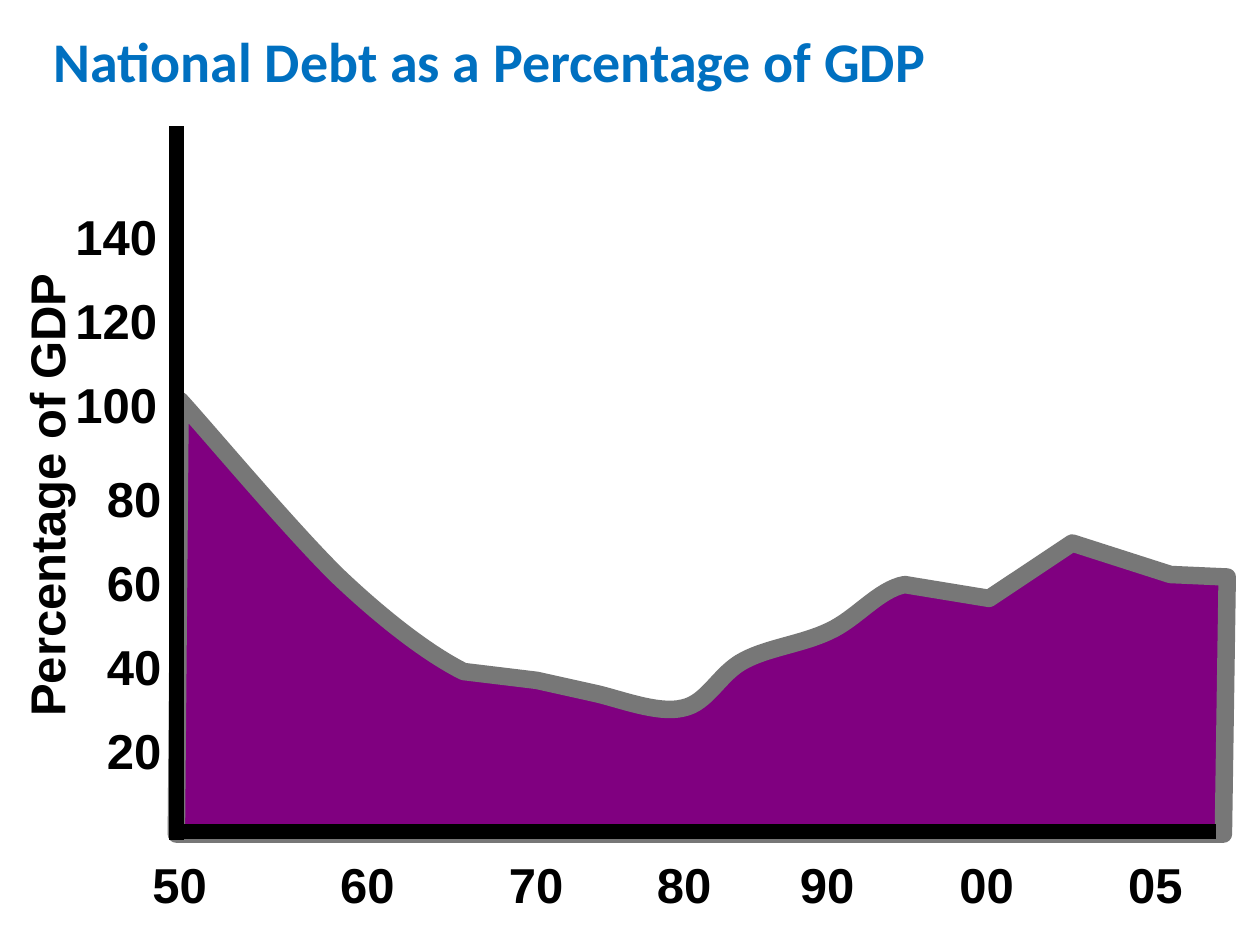
from dataclasses import dataclass

from lxml import etree
from pptx import Presentation
from pptx.dml.color import RGBColor
from pptx.enum.shapes import MSO_CONNECTOR, MSO_SHAPE
from pptx.enum.text import MSO_AUTO_SIZE, PP_ALIGN
from pptx.oxml.ns import qn
from pptx.util import Inches, Pt

STRAIGHT = MSO_CONNECTOR.STRAIGHT
RECTANGLE = MSO_SHAPE.RECTANGLE
LEFT, CENTER = PP_ALIGN.LEFT, PP_ALIGN.CENTER
GROW = MSO_AUTO_SIZE.SHAPE_TO_FIT_TEXT


@dataclass(frozen=True)
class Theme:
    ink: RGBColor = RGBColor(0x00, 0x00, 0x00)
    paper: RGBColor = RGBColor(0xFF, 0xFF, 0xFF)
    title: RGBColor = RGBColor(0x00, 0x70, 0xC0)
    debt: RGBColor = RGBColor(0x80, 0x00, 0x80)
    outline: RGBColor = RGBColor(0x77, 0x77, 0x77)
    title_size: int = 32
    label_size: int = 28
    axis_width: int = 9
    outline_width: int = 10
    title_font: str = "Calibri"
    label_font: str = "Arial"


class SlideBuilder:
    def __init__(self, slide, theme):
        self.shapes = slide.shapes
        self.theme = theme

    def set_text(self, shape, text, align, color, font_format):
        frame = shape.text_frame
        frame.word_wrap = True
        frame.auto_size = GROW
        paragraph = frame.paragraphs[0]
        paragraph.alignment = align
        run = paragraph.add_run()
        run.text = text
        run.font.color.rgb = color
        for key, value in font_format.items():
            setattr(run.font, key, value)

    def label(self, text, box, align=CENTER, rotation=0):
        label = self.shapes.add_textbox(*map(Inches, box))
        label.rotation = rotation
        theme = self.theme
        self.set_text(label, text, align, theme.ink, {
            "name": theme.label_font, "size": Pt(theme.label_size), "bold": True})

    def title(self, text, box):
        theme = self.theme
        banner = self.shapes.add_shape(RECTANGLE, *map(Inches, box))
        banner.shadow.inherit = False
        banner.fill.solid()
        banner.fill.fore_color.rgb = theme.paper
        banner.line.fill.background()
        self.set_text(banner, text, LEFT, theme.title, {
            "name": theme.title_font, "size": Pt(theme.title_size), "bold": True})

    def axis(self, start, end):
        axis = self.shapes.add_connector(STRAIGHT, *map(Inches, start + end))
        axis.line.color.rgb = self.theme.ink
        axis.line.width = Pt(self.theme.axis_width)
        etree.SubElement(axis._element.spPr, qn("a:effectLst"))

    def area(self, start, segments):
        ends = [segment[-1] for segment in segments]
        builder = self.shapes.build_freeform(*map(Inches, start), scale=1.0)
        builder.add_line_segments([tuple(map(Inches, end)) for end in ends], close=True)
        area = builder.convert_to_shape()
        area.shadow.inherit = False
        area.fill.solid()
        area.fill.fore_color.rgb = self.theme.debt
        area.line.color.rgb = self.theme.outline
        area.line.width = Pt(self.theme.outline_width)
        outline = area._element.spPr.find(qn("a:ln"))
        etree.SubElement(outline, qn("a:round"))
        left = min(x for x, _ in [start] + ends)
        top = min(y for _, y in [start] + ends)
        edges = list(area._element.iter(qn("a:lnTo")))
        for edge, segment in zip(edges, segments):
            if len(segment) == 3:
                curve = etree.Element(qn("a:cubicBezTo"))
                for x, y in segment:
                    etree.SubElement(curve, qn("a:pt"), x=str(Inches(x - left)),
                                     y=str(Inches(y - top)))
                edge.getparent().replace(edge, curve)


LABEL_HEIGHT = 0.52
YEAR_TOP = 6.73
TICK_STEP = 2 / 3
YEARS = [("50", 1, 0.85), ("60", 2.58, 0.67), ("70", 3.92, 0.67), ("80", 5, 0.86),
         ("90", 6.08, 0.97), ("00", 7.33, 1), ("05", 8.75, 0.84)]
TICK_GROUPS = [(0.75, 5.67, 1, ("20", "40", "60", "80")),
               (0.5, 2.92, 1.25, ("100", "120", "140"))]
DEBT_START = (1.43, 3.18)
DEBT_SEGMENTS = [
    [(1.64, 3.41), (2.32, 4.22), (2.69, 4.58)],
    [(3.07, 4.94), (3.42, 5.2), (3.68, 5.33)],
    [(4.26, 5.4)],
    [(4.71, 5.5)],
    [(4.9, 5.54), (5.22, 5.67), (5.42, 5.62)],
    [(5.62, 5.58), (5.71, 5.34), (5.91, 5.24)],
    [(6.1, 5.14), (6.37, 5.11), (6.58, 5.01)],
    [(6.8, 4.91), (6.97, 4.68), (7.18, 4.64)],
    [(7.85, 4.75)],
    [(8.51, 4.31)],
    [(9.29, 4.56)],
    [(9.74, 4.58)],
    [(9.71, 6.62)],
    [(1.4, 6.62)],
]


def main():
    deck = Presentation()
    deck.slide_width, deck.slide_height = Inches(10), Inches(7.5)
    slide = deck.slides.add_slide(deck.slide_layouts[6])
    builder = SlideBuilder(slide, Theme())

    for left, lowest_top, width, ticks in TICK_GROUPS:
        for index, tick in enumerate(ticks):
            top = lowest_top - index * TICK_STEP
            builder.label(tick, (left, top, width, LABEL_HEIGHT), LEFT)
    builder.title("National Debt as a Percentage of GDP", (0.33, 0.18, 9.61, 0.59))
    for year, left, width in YEARS:
        builder.label(year, (left, YEAR_TOP, width, LABEL_HEIGHT))
    builder.label("Percentage of GDP", (-1.55, 3.67, 3.78, LABEL_HEIGHT), rotation=270)
    builder.area(DEBT_START, DEBT_SEGMENTS)
    builder.axis((1.36, 6.6), (9.65, 6.6))
    builder.axis((1.4, 1), (1.4, 6.67))

    deck.save("out.pptx")


if __name__ == "__main__":
    main()
